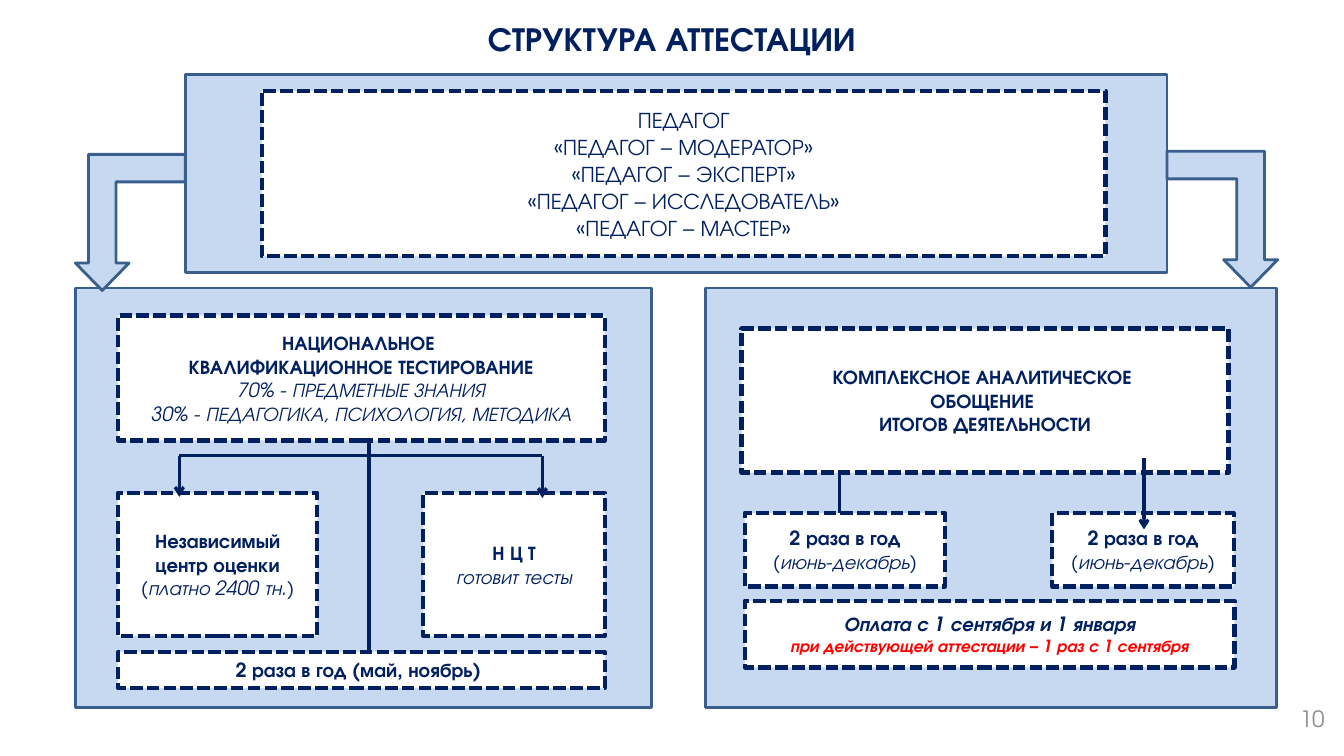
from dataclasses import dataclass

from lxml.etree import SubElement
from pptx import Presentation
from pptx.dml.color import RGBColor as RGB
from pptx.enum.dml import MSO_LINE as Dash
from pptx.enum.shapes import MSO_CONNECTOR as Conn, MSO_SHAPE as Shp
from pptx.enum.text import MSO_ANCHOR as Anchor, PP_ALIGN as Align
from pptx.oxml.ns import qn
from pptx.util import Cm, Pt


@dataclass(frozen=True)
class Theme:
    font: str = "TeX Gyre Adventor"
    navy: RGB = RGB(0x00, 0x20, 0x60)
    panel: RGB = RGB(0xC6, 0xD9, 0xF1)
    outline: RGB = RGB(0x3A, 0x5F, 0x8C)
    white: RGB = RGB(0xFF, 0xFF, 0xFF)
    red: RGB = RGB(0xFF, 0x00, 0x00)
    grey: RGB = RGB(0x8C, 0x8C, 0x8C)
    title: int = 24
    large: int = 16
    body: int = 14
    small: int = 12
    panel_line: float = 2
    box_line: float = 3
    link_line: float = 2.25


T = Theme()


@dataclass(frozen=True)
class Area:
    """Position and size in centimetres."""
    x: float
    y: float
    w: float
    h: float

    def emu(self):
        return Cm(self.x), Cm(self.y), Cm(self.w), Cm(self.h)


@dataclass(frozen=True)
class Para:
    text: str
    bold: bool = False
    italic: bool = False
    size: int = T.body
    color: RGB = T.navy


@dataclass(frozen=True)
class Box:
    area: Area
    paras: tuple[Para, ...]


@dataclass(frozen=True)
class Link:
    x1: float
    y1: float
    x2: float
    y2: float
    arrow: bool = True


@dataclass(frozen=True)
class Turn:
    """Block arrow that leaves the top panel and bends down."""
    area: Area
    flip: bool = False


def write(sp, paras: tuple[Para, ...], align=Align.CENTER) -> None:
    tf = sp.text_frame
    tf.word_wrap = True
    tf.vertical_anchor = Anchor.MIDDLE
    for i, para in enumerate(paras):
        p = tf.add_paragraph() if i else tf.paragraphs[0]
        p.text, p.alignment = para.text, align
        f = p.font
        f.name, f.size = T.font, Pt(para.size)
        f.bold, f.italic = para.bold, para.italic
        f.color.rgb = para.color


def add_shape(s, kind: Shp, area: Area, fill: RGB):
    sp = s.shapes.add_shape(kind, *area.emu())
    sp.shadow.inherit = False
    sp.fill.solid()
    sp.fill.fore_color.rgb = fill
    return sp


def outline(sp, color: RGB, width: float) -> None:
    sp.line.color.rgb = color
    sp.line.width = Pt(width)


def add_panel(s, area: Area) -> None:
    outline(add_shape(s, Shp.RECTANGLE, area, T.panel), T.outline, T.panel_line)


def add_box(s, box: Box) -> None:
    sp = add_shape(s, Shp.RECTANGLE, box.area, T.white)
    outline(sp, T.navy, T.box_line)
    sp.line.dash_style = Dash.SQUARE_DOT
    write(sp, box.paras)


def add_link(s, link: Link) -> None:
    cn = s.shapes.add_connector(
        Conn.STRAIGHT, Cm(link.x1), Cm(link.y1), Cm(link.x2), Cm(link.y2))
    outline(cn, T.navy, T.link_line)
    if link.arrow:
        SubElement(cn.line._get_or_add_ln(), qn("a:tailEnd"), type="arrow")
    SubElement(cn._element.spPr, qn("a:effectLst"))


def add_turn(s, turn: Turn) -> None:
    sp = add_shape(s, Shp.BENT_UP_ARROW, turn.area, T.panel)
    outline(sp, T.outline, T.panel_line)
    for i, value in enumerate((0.25, 0.244, 0.25)):
        sp.adjustments[i] = value
    sp.rotation = 180
    if turn.flip:
        sp._element.spPr.xfrm.set("flipH", "1")


PANELS = (
    Area(4.67, 1.88, 24.74, 4.98),
    Area(1.9, 7.26, 14.53, 10.57),
    Area(17.78, 7.26, 14.4, 10.57),
)
CATEGORIES = ("ПЕДАГОГ", "«ПЕДАГОГ – МОДЕРАТОР»", "«ПЕДАГОГ – ЭКСПЕРТ»",
              "«ПЕДАГОГ – ИССЛЕДОВАТЕЛЬ»", "«ПЕДАГОГ – МАСТЕР»")
TWICE_A_YEAR = (Para("2 раза в год", bold=True),
                Para("(июнь-декабрь)", italic=True))

# Boxes and links from back to front
PARTS = (
    # Teacher categories
    Box(Area(6.6, 2.29, 21.26, 4.17),
        tuple(Para(name, size=T.large) for name in CATEGORIES)),
    # Testing branch
    Box(Area(2.97, 7.95, 12.27, 3.15), (
        Para("НАЦИОНАЛЬНОЕ ", bold=True),
        Para("КВАЛИФИКАЦИОННОЕ ТЕСТИРОВАНИЕ", bold=True),
        Para("70% - ПРЕДМЕТНЫЕ ЗНАНИЯ", italic=True),
        Para("30% - ПЕДАГОГИКА, ПСИХОЛОГИЯ, МЕТОДИКА", italic=True))),
    Box(Area(2.97, 12.42, 5.03, 3.61), (
        Para("Независимый центр оценки", bold=True),
        Para("(платно 2400 тн.)", italic=True))),
    Box(Area(10.67, 12.42, 4.57, 3.61), (
        Para("Н Ц Т", bold=True), Para("готовит тесты", italic=True))),
    Link(9.3, 11.1, 9.3, 16.74),
    Box(Area(2.97, 16.43, 12.27, 0.91),
        (Para("2 раза в год (май, ноябрь) ", bold=True),)),
    Turn(Area(1.9, 3.89, 2.77, 3.43)),
    Link(4.52, 11.48, 13.67, 11.48, arrow=False),
    Link(4.52, 11.48, 4.52, 12.52),
    Link(13.67, 11.48, 13.67, 12.55),
    # Analytical branch
    Turn(Area(29.41, 3.81, 2.79, 3.43), flip=True),
    Box(Area(18.69, 8.28, 12.27, 3.63), (
        Para("КОМПЛЕКСНОЕ АНАЛИТИЧЕСКОЕ ", bold=True),
        Para("ОБОЩЕНИЕ ", bold=True),
        Para("ИТОГОВ ДЕЯТЕЛЬНОСТИ", bold=True))),
    Link(21.16, 11.89, 21.16, 13.61),
    Box(Area(18.77, 12.93, 5.05, 1.85), TWICE_A_YEAR),
    Box(Area(26.52, 12.93, 4.57, 1.85), TWICE_A_YEAR),
    Link(28.83, 11.53, 28.83, 13.34),
    Box(Area(18.77, 15.14, 12.34, 1.68), (
        Para("Оплата с 1 сентября и 1 января", bold=True, italic=True),
        Para("при действующей аттестации – 1 раз с 1 сентября",
             bold=True, italic=True, size=T.small, color=T.red))),
)
DRAW = {Box: add_box, Link: add_link, Turn: add_turn}


def main() -> None:
    prs = Presentation()
    prs.slide_width, prs.slide_height = Cm(33.87), Cm(19.05)
    s = prs.slides.add_slide(prs.slide_layouts[6])

    # Background panels
    for area in PANELS:
        add_panel(s, area)

    # Title
    title = add_shape(s, Shp.RECTANGLE, Area(1.9, 0.56, 30.3, 0.79), T.white)
    title.line.fill.background()
    write(title, (Para("СТРУКТУРА АТТЕСТАЦИИ ", bold=True, size=T.title),))

    # Diagram
    for part in PARTS:
        DRAW[type(part)](s, part)

    # Page number
    number = s.shapes.add_textbox(*Area(25.73, 17.6, 7.9, 1.02).emu())
    write(number, (Para("10", size=T.large, color=T.grey),), Align.RIGHT)

    prs.save("out.pptx")


if __name__ == "__main__":
    main()
